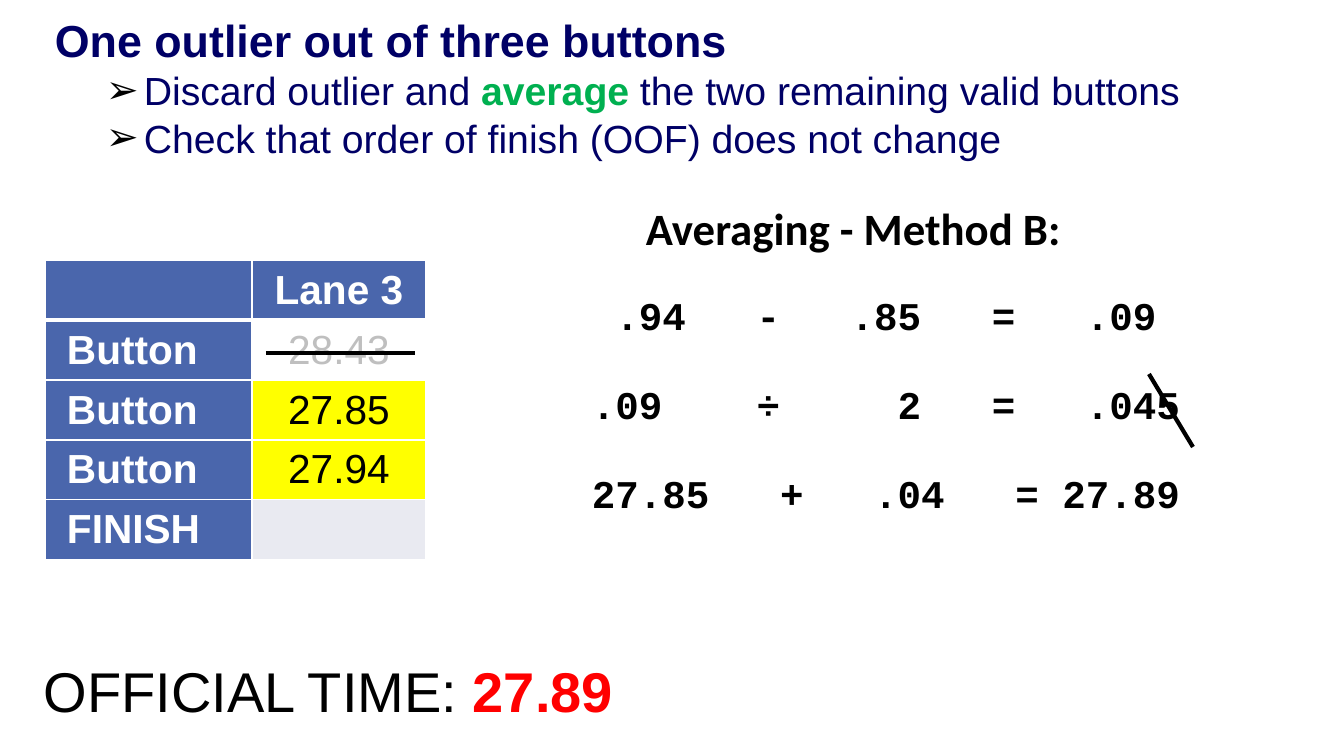
from dataclasses import dataclass

from lxml.etree import SubElement
from pptx import Presentation
from pptx.dml.color import RGBColor
from pptx.enum.shapes import MSO_CONNECTOR as Connector
from pptx.enum.text import MSO_ANCHOR as Anchor, PP_ALIGN as Align
from pptx.oxml.ns import qn
from pptx.util import Emu, Pt


@dataclass(frozen=True)
class Theme:
    navy: str = "000066"
    green: str = "00B050"
    red: str = "FF0000"
    black: str = "000000"
    white: str = "FFFFFF"
    header: str = "4A66AC"
    yellow: str = "FFFF00"
    pale: str = "E9EAF1"
    faded: str = "BFBFBF"
    sans: str = "Arial"
    heading: str = "Calibri"
    mono: str = "Courier New"
    title: int = 32
    body: int = 28
    cell: int = 29
    result: int = 40


def px(length):
    return Emu(round(length * 914400 / 100.8))


class SlideBuilder:
    """Draw styled elements on one slide, with lengths in pixels."""

    def __init__(self, theme):
        self.theme = theme
        self.presentation = Presentation()
        self.presentation.slide_width = px(1344)
        self.presentation.slide_height = px(756)
        self.slide = self.presentation.slides.add_slide(self.presentation.slide_layouts[6])

    def run(self, paragraph, text, size, color, bold=False, font=None):
        run = paragraph.add_run()
        run.text = text
        run.font.name = font or self.theme.sans
        run.font.size = Pt(size)
        run.font.bold = bold
        run.font.color.rgb = RGBColor.from_string(color)

    def text_box(self, left, top, width, height, inset=5, wrap=True):
        frame = self.slide.shapes.add_textbox(*map(px, (left, top, width, height))).text_frame
        frame.word_wrap = wrap
        frame.margin_top = frame.margin_bottom = px(inset)
        return frame

    def bullet(self, paragraph):
        paragraph.level = 1
        properties = paragraph._p.get_or_add_pPr()
        properties.set("marL", str(px(89)))
        properties.set("indent", str(px(-38)))
        color = SubElement(properties, qn("a:buClr"))
        SubElement(color, qn("a:srgbClr"), val=self.theme.black)
        SubElement(properties, qn("a:buFont"), typeface=self.theme.sans)
        SubElement(properties, qn("a:buChar"), char="➢")

    def tab_stops(self, paragraph, positions):
        tabs = SubElement(paragraph._p.get_or_add_pPr(), qn("a:tabLst"))
        for position in positions:
            SubElement(tabs, qn("a:tab"), pos=str(px(position)), algn="l")

    def table(self, left, top, widths, heights):
        box = map(px, (left, top, sum(widths), sum(heights)))
        table = self.slide.shapes.add_table(len(heights), len(widths), *box).table
        for column, width in zip(table.columns, widths):
            column.width = px(width)
        for row, height in zip(table.rows, heights):
            row.height = px(height)
        return table

    def style_cell(self, cell, fill=None, side_inset=22, top_inset=0, bottom_line=1):
        cell.margin_left = cell.margin_right = px(side_inset)
        cell.margin_top, cell.margin_bottom = px(top_inset), 0
        properties = cell._tc.get_or_add_tcPr()
        for edge, points in (("L", 1), ("R", 1), ("T", 1), ("B", bottom_line)):
            line = SubElement(properties, qn(f"a:ln{edge}"), w=str(Pt(points)))
            SubElement(SubElement(line, qn("a:solidFill")), qn("a:srgbClr"), val=self.theme.white)
        if fill:
            cell.fill.solid()
            cell.fill.fore_color.rgb = RGBColor.from_string(fill)
        else:
            cell.fill.background()

    def line(self, *ends):
        connector = self.slide.shapes.add_connector(Connector.STRAIGHT, *map(px, ends))
        connector.line.color.rgb = RGBColor.from_string(self.theme.black)
        connector.line.width = Pt(3)
        SubElement(connector._element.spPr, qn("a:effectLst"))

    def times_table(self, rows):
        theme = self.theme
        table = self.table(45, 260, [207, 174], [60] * len(rows))
        for row_index, (label, time, color, fill) in enumerate(rows):
            for column_index, text in enumerate((label, time)):
                is_header = row_index == 0 or column_index == 0
                cell = table.cell(row_index, column_index)
                cell.vertical_anchor = Anchor.MIDDLE
                self.style_cell(cell, theme.header if is_header else fill,
                                bottom_line=1 if row_index else 3)
                if text:
                    paragraph = cell.text_frame.paragraphs[0]
                    paragraph.alignment = Align.CENTER if column_index else Align.LEFT
                    self.run(paragraph, text, theme.cell,
                             theme.white if is_header else color, is_header)

    def equation_table(self, equations, character=23.52):
        theme = self.theme
        cell = self.table(506, 243, [760], [447]).cell(0, 0)
        self.style_cell(cell, side_inset=86, top_inset=55, bottom_line=3)
        frame = cell.text_frame
        for index, (columns, text) in enumerate(equations):
            paragraph = frame.add_paragraph() if index else frame.paragraphs[0]
            paragraph.alignment = Align.LEFT
            paragraph.space_after = Pt(31.7)
            self.tab_stops(paragraph, [column * character for column in columns if column])
            lead = "\t" if columns[0] else ""
            self.run(paragraph, lead + "\t".join(text.split()), theme.body,
                     theme.black, True, theme.mono)


def main():
    theme = Theme()
    builder = SlideBuilder(theme)

    builder.times_table([
        ("", "Lane 3", theme.white, theme.header),
        ("Button", "28.43", theme.faded, None),
        ("Button", "27.85", theme.black, theme.yellow),
        ("Button", "27.94", theme.black, theme.yellow),
        ("FINISH", "", theme.black, theme.pale),
    ])
    builder.equation_table([
        ((1, 7, 11, 17, 21), ".94 - .85 = .09"),
        ((0, 7, 13, 17, 21), ".09 ÷ 2 = .045"),
        ((0, 8, 12, 18, 20), "27.85 + .04 = 27.89"),
    ])
    builder.line(1149, 374, 1193, 447)
    builder.line(266, 353, 415, 353)

    official = builder.text_box(34, 654, 1252, 84, inset=10).paragraphs[0]
    official.line_spacing = 0.9
    builder.run(official, "OFFICIAL TIME: ", theme.result, theme.black)
    builder.run(official, "27.89", theme.result, theme.red, True)

    method = builder.text_box(636, 196, 502, 64, wrap=False).paragraphs[0]
    builder.run(method, "Averaging - Method B:", theme.title, theme.black, True, theme.heading)

    rules = builder.text_box(45, 0, 1317, 209)
    title = rules.paragraphs[0]
    title.line_spacing = 1.15
    builder.run(title, "One outlier out of three buttons", theme.title, theme.navy, True)
    for parts in (
        [("Discard outlier and ", theme.navy, False), ("average", theme.green, True),
         (" the two remaining valid buttons", theme.navy, False)],
        [("Check that order of finish (OOF) does not change", theme.navy, False)],
    ):
        paragraph = rules.add_paragraph()
        builder.bullet(paragraph)
        for text, color, bold in parts:
            builder.run(paragraph, text, theme.body, color, bold)

    builder.presentation.save("out.pptx")


if __name__ == "__main__":
    main()
